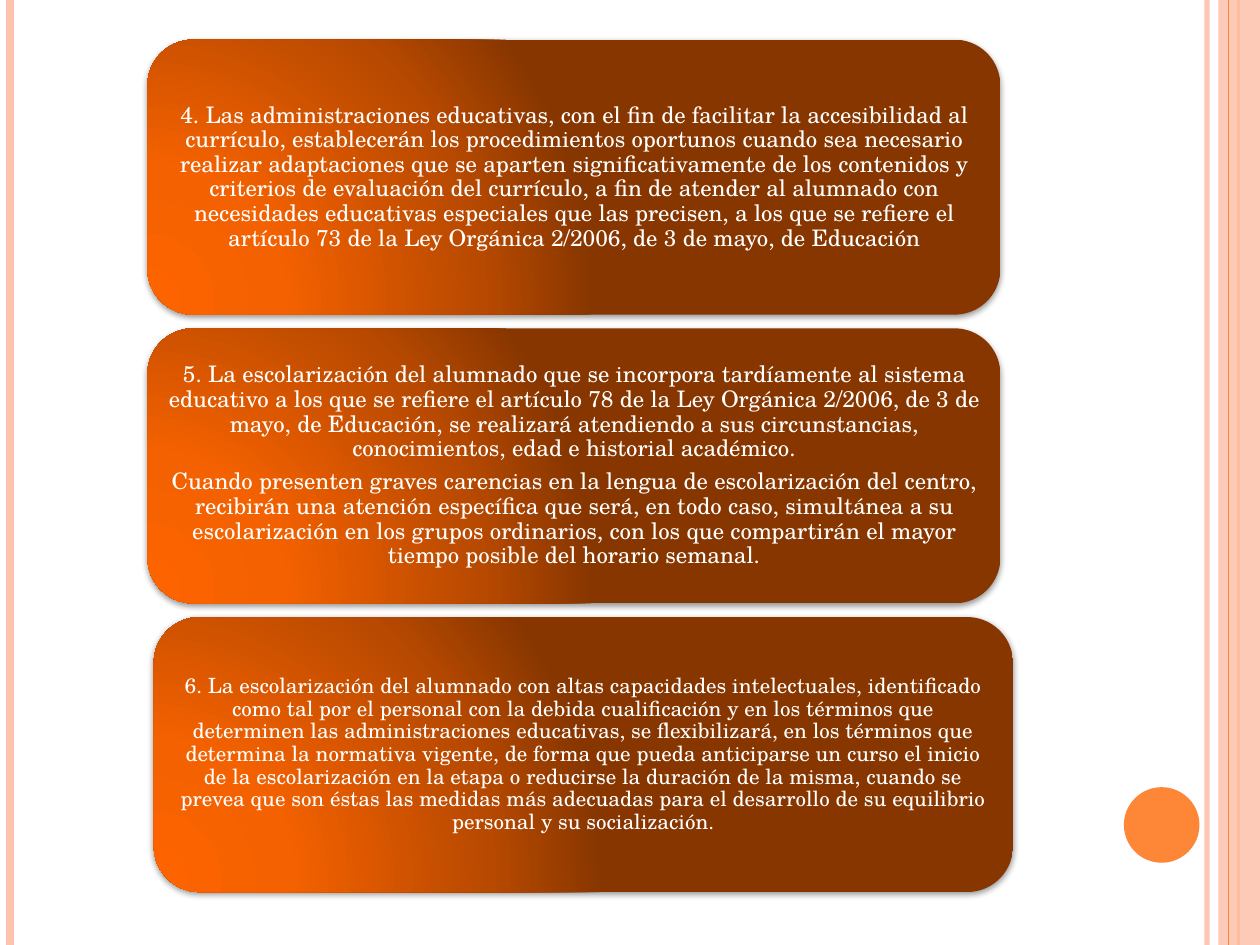
import pptx
import pptx.util
import pptx.dml.color
import pptx.enum.shapes
import pptx.enum.text
import pptx.oxml
import pptx.oxml.ns

KIND = pptx.enum.shapes.MSO_SHAPE
WIDE = pptx.util.Inches(10)
HIGH = pptx.util.Inches(7.5)
FONT = "TeX Gyre Schola"
PEACH, AMBER, WHITE = "FEC3AE", "FE8637", "FFFFFF"
STOPS = [(0, "FD6400"), (30, "F46100"), (75, "B74900"), (100, "873600")]

CARDS = [
    (11.7, 67.7, 13, [
        "4. Las administraciones educativas, con el fin de facilitar la accesibilidad al "
        "currículo, establecerán los procedimientos oportunos cuando sea necesario "
        "realizar adaptaciones que se aparten significativamente de los contenidos y "
        "criterios de evaluación del currículo, a fin de atender al alumnado con "
        "necesidades educativas especiales que las precisen, a los que se refiere el "
        "artículo 73 de la Ley Orgánica 2/2006, de 3 de mayo, de Educación"]),
    (11.7, 67.7, 13, [
        "5. La escolarización del alumnado que se incorpora tardíamente al sistema "
        "educativo a los que se refiere el artículo 78 de la Ley Orgánica 2/2006, de 3 de "
        "mayo, de Educación, se realizará atendiendo a sus circunstancias, "
        "conocimientos, edad e historial académico.",
        "Cuando presenten graves carencias en la lengua de escolarización del centro, "
        "recibirán una atención específica que será, en todo caso, simultánea a su "
        "escolarización en los grupos ordinarios, con los que compartirán el mayor "
        "tiempo posible del horario semanal."]),
    (12.2, 68.2, 12, [
        "6. La escolarización del alumnado con altas capacidades intelectuales, identificado "
        "como tal por el personal con la debida cualificación y en los términos que determinen "
        "las administraciones educativas, se flexibilizará, en los términos que determina la "
        "normativa vigente, de forma que pueda anticiparse un curso el inicio de la "
        "escolarización en la etapa o reducirse la duración de la misma, cuando se prevea que "
        "son éstas las medidas más adecuadas para el desarrollo de su equilibrio personal y su "
        "socialización."]),
]


def tint(code):
    return pptx.dml.color.RGBColor.from_string(code)


def across(share):
    return round(WIDE * share / 100)


def down(share):
    return round(HIGH * share / 100)


def node(tag, body, attrs=""):
    space = pptx.oxml.ns.nsdecls("a")
    return pptx.oxml.parse_xml(f"<a:{tag} {space} {attrs}>{body}</a:{tag}>")


def fade(item, alpha):
    for clr in item.element.spPr.iter(pptx.oxml.ns.qn("a:srgbClr")):
        clr.append(node("alpha", "", f'val="{alpha * 1000}"'))


def add_rule(slide, left, width, code, alpha=100):
    rule = slide.shapes.add_connector(
        pptx.enum.shapes.MSO_CONNECTOR.STRAIGHT, across(left), 0, across(left), HIGH)
    rule.line.color.rgb = tint(code)
    rule.line.width = pptx.util.Pt(width)
    rule.element.spPr.append(node("effectLst", ""))
    if alpha < 100:
        fade(rule, alpha)


def add_form(slide, kind, left, top, width, height):
    form = slide.shapes.add_shape(
        kind, across(left), down(top), across(width), down(height))
    form.shadow.inherit = False
    form.line.fill.background()
    return form


def add_flat(slide, kind, box, code, alpha=100):
    form = add_form(slide, kind, *box)
    form.fill.solid()
    form.fill.fore_color.rgb = tint(code)
    if alpha < 100:
        fade(form, alpha)


def add_glow(form):
    form.fill.background()
    props = form.element.spPr
    stops = "".join(f'<a:gs pos="{pos * 1000}"><a:srgbClr val="{code}"/></a:gs>'
                    for pos, code in STOPS)
    focus = '<a:fillToRect l="5000" t="100000" r="120000" b="10000"/>'
    blend = node("gradFill", f'<a:gsLst>{stops}</a:gsLst><a:path path="circle">{focus}</a:path>')
    props.replace(props.find(pptx.oxml.ns.qn("a:noFill")), blend)
    blur, dist = pptx.util.Pt(4), pptx.util.Pt(1.6)
    shade = node("outerShdw", '<a:srgbClr val="000000"><a:alpha val="42000"/></a:srgbClr>',
                 f'blurRad="{blur}" dist="{dist}" dir="5400000" rotWithShape="0"')
    props.find(pptx.oxml.ns.qn("a:effectLst")).append(shade)


def add_text(form, size, texts):
    frame = form.text_frame
    frame.word_wrap = True
    frame.vertical_anchor = pptx.enum.text.MSO_ANCHOR.MIDDLE
    frame.margin_left = frame.margin_right = pptx.util.Inches(0.05)
    frame.margin_top = frame.margin_bottom = pptx.util.Inches(0.03)
    for num, text in enumerate(texts):
        para = frame.add_paragraph() if num else frame.paragraphs[0]
        para.alignment = pptx.enum.text.PP_ALIGN.CENTER
        para.line_spacing = 0.9
        para.space_after = pptx.util.Pt(4.9)
        run = para.add_run()
        run.text = text
        run.font.name = FONT
        run.font.size = pptx.util.Pt(size)
        run.font.color.rgb = tint(WHITE)


def add_card(slide, row, left, width, size, texts):
    card = add_form(slide, KIND.ROUNDED_RECTANGLE, left, 4.2 + 30.55 * row, width, 29.1)
    add_glow(card)
    add_text(card, size, texts)


def main():
    deck = pptx.Presentation()
    deck.slide_width, deck.slide_height = WIDE, HIGH
    slide = deck.slides.add_slide(deck.slide_layouts[6])
    add_rule(slide, 95.8, 3, PEACH, 93)
    add_rule(slide, 0.8, 4.5, PEACH)
    add_rule(slide, 98.3, 1.5, AMBER)
    add_flat(slide, KIND.RECTANGLE, (96.7, 0, 3.3, 100), PEACH, 87)
    add_rule(slide, 97.5, 0.75, AMBER)
    add_flat(slide, KIND.OVAL, (89.2, 83.3, 6, 8), AMBER)
    for row, card in enumerate(CARDS):
        add_card(slide, row, *card)
    deck.save("out.pptx")


if __name__ == "__main__":
    main()
